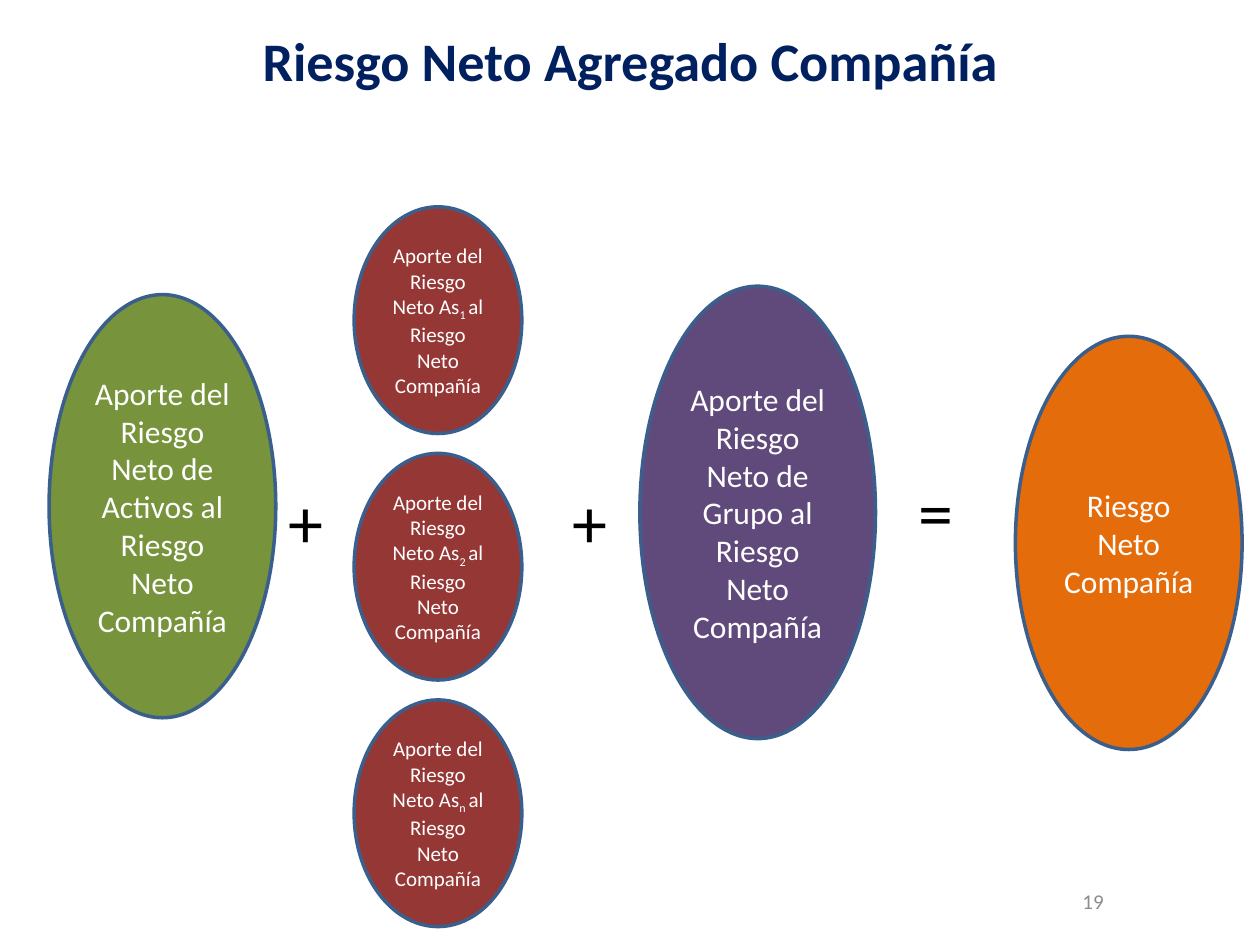
"""Build the slide that adds up the aggregate net risk of the company."""
from pptx import Presentation
from pptx.dml.color import RGBColor
from pptx.enum.shapes import MSO_SHAPE
from pptx.enum.text import MSO_ANCHOR, PP_ALIGN
from pptx.util import Cm, Pt

THEME = {
    "font": "Calibri",
    "navy": "002060", "grey": "8C8C8C", "black": "000000", "white": "FFFFFF",
    "outline": "3A5F8C", "green": "77933C", "red": "953735",
    "purple": "604A7B", "orange": "E46C0A",
    "title": 31, "sign": 40, "term": 18, "small": 12, "line": 2,
}

TITLE = ("Riesgo Neto Agregado Compañía", (1.27, 0.76, 22.86, 2.21))
PAGE_NUMBER = ("19", (18.21, 17.65, 4.29, 1.02))
TERMS = [
    ("Aporte del Riesgo Neto de Activos al Riesgo Neto Compañía", "green", (0.99, 5.94, 4.57, 8.53)),
    ("Aporte del Riesgo Neto de Grupo al Riesgo Neto Compañía", "purple", (12.9, 5.77, 4.75, 9.12)),
    ("Riesgo Neto Compañía", "orange", (20.47, 6.78, 4.57, 8.33)),
]
INSURERS = ["1", "2", "n"]
INSURER_TEXT = ("Aporte del Riesgo Neto As", "al Riesgo Neto Compañía")
INSURER_AREA = (7.14, 4.17, 3.38, 4.57)
INSURER_STEP = 4.97
SIGNS = [("+", 5.56, 9.53), ("+", 11.3, 9.53), ("=", 18.26, 9.32)]
SIGN_SIZE = (1.22, 1.96)


def color(name):
    return RGBColor.from_string(THEME[name])


def add_span(para, text, size, ink, bold=False):
    span = para.add_run()
    span.text = text
    span.font.name = THEME["font"]
    span.font.size = Pt(THEME[size])
    span.font.bold = bold
    span.font.color.rgb = color(ink)
    return span


def add_box(page, area, align, anchor=MSO_ANCHOR.MIDDLE, wrap=True):
    box = page.shapes.add_textbox(*map(Cm, area))
    box.text_frame.word_wrap = wrap
    box.text_frame.vertical_anchor = anchor
    para = box.text_frame.paragraphs[0]
    para.alignment = align
    return para


def add_ellipse(page, area, fill):
    ellipse = page.shapes.add_shape(MSO_SHAPE.OVAL, *map(Cm, area))
    ellipse.shadow.inherit = False
    ellipse.fill.solid()
    ellipse.fill.fore_color.rgb = color(fill)
    ellipse.line.color.rgb = color("outline")
    ellipse.line.width = Pt(THEME["line"])
    ellipse.text_frame.word_wrap = True
    ellipse.text_frame.vertical_anchor = MSO_ANCHOR.MIDDLE
    para = ellipse.text_frame.paragraphs[0]
    para.alignment = PP_ALIGN.CENTER
    return para


def main():
    deck = Presentation()
    deck.slide_width, deck.slide_height = Cm(25.4), Cm(19.05)
    page = deck.slides.add_slide(deck.slide_layouts[6])

    text, area = TITLE
    para = add_box(page, area, PP_ALIGN.CENTER)
    add_span(para, text, "title", "navy", bold=True)
    para.add_line_break()
    para.font.size = Pt(THEME["title"])

    text, area = PAGE_NUMBER
    add_span(add_box(page, area, PP_ALIGN.RIGHT), text, "small", "grey")

    for text, fill, area in TERMS:
        add_span(add_ellipse(page, area, fill), text, "term", "white")

    left, top, width, height = INSURER_AREA
    before, after = INSURER_TEXT
    for row, index in enumerate(INSURERS):
        para = add_ellipse(page, (left, top + row * INSURER_STEP, width, height), "red")
        add_span(para, before, "small", "white")
        subscript = add_span(para, index + " ", "small", "white")
        subscript.font._element.set("baseline", "-25000")
        add_span(para, after, "small", "white")

    for sign, left, top in SIGNS:
        para = add_box(page, (left, top, *SIGN_SIZE), PP_ALIGN.LEFT, MSO_ANCHOR.TOP, wrap=False)
        add_span(para, sign, "sign", "black")

    deck.save("out.pptx")


if __name__ == "__main__":
    main()
